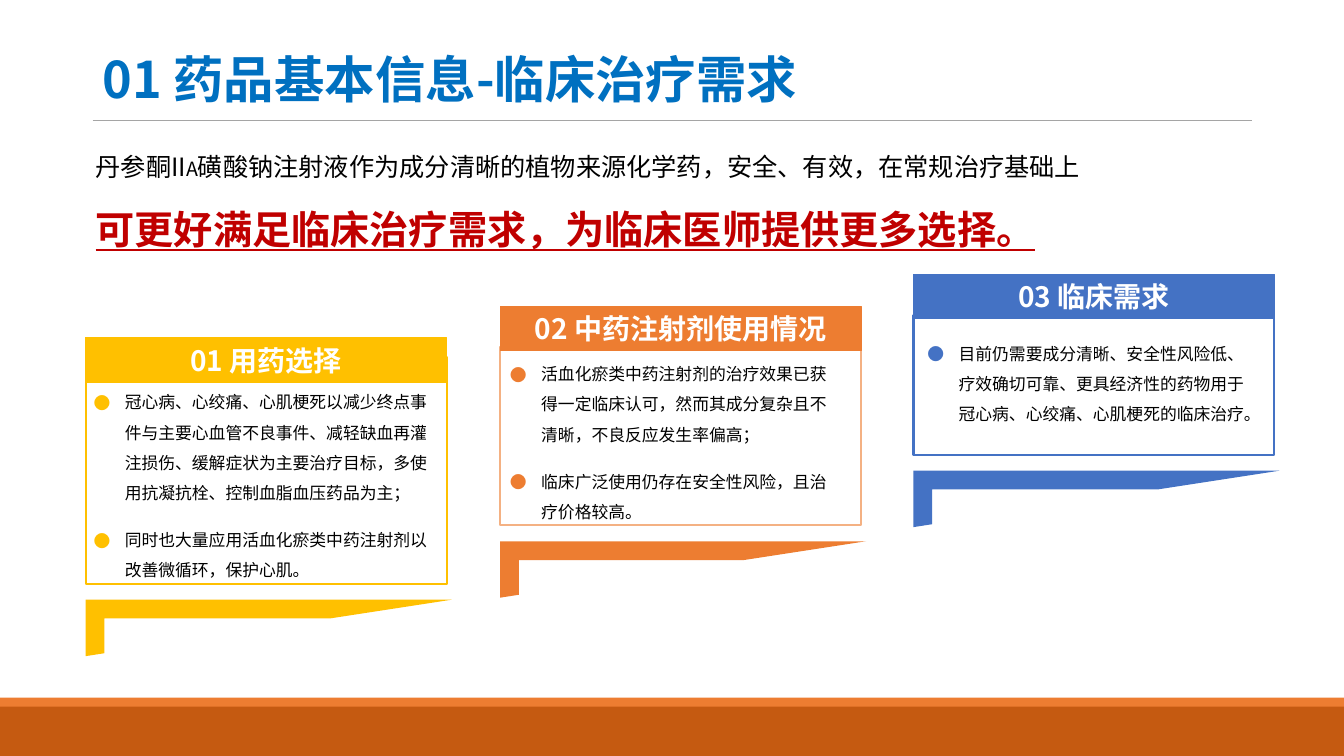
from lxml import etree
from pptx import Presentation
from pptx.dml.color import RGBColor
from pptx.enum import shapes, text
from pptx.oxml import ns
from pptx.util import Inches, Pt

FONT = "Noto Sans CJK SC"
COLORS = {
    "title": "0070C0", "body": "000000", "accent": "C00000", "white": "FFFFFF",
    "rule": "A5A5A5", "footer": "C55A11", "orange": "ED7D31",
    "orange_edge": "F4B183", "yellow": "FFC000", "blue": "4472C4",
}
TITLE = "01 药品基本信息-临床治疗需求"
INTRO = [
    [("丹参酮II", {"size": 18}), ("A", {"size": 14}),
     ("磺酸钠注射液作为成分清晰的植物来源化学药，安全、有效，在常规治疗基础上", {"size": 18})],
    [("可更好满足临床治疗需求，为临床医师提供更多选择。",
      {"size": 28, "color": "accent", "bold": True, "underline": True})],
]
CARDS = [
    {"head": "01 用药选择", "color": "yellow", "edge": "yellow", "left": 0.85, "top": 3.35,
     "frame": (3.54, 2.25), "body": (0.83, 3.74, 3.63, 2.05), "gap": 6,
     "points": ["冠心病、心绞痛、心肌梗死以减少终点事件与主要心血管不良事件、减轻缺血再灌注损伤、"
                "缓解症状为主要治疗目标，多使用抗凝抗栓、控制血脂血压药品为主；",
                "同时也大量应用活血化瘀类中药注射剂以改善微循环，保护心肌。"]},
    {"head": "02 中药注射剂使用情况", "color": "orange", "edge": "orange_edge", "left": 4.96, "top": 3.04,
     "frame": (3.44, 1.77), "body": (4.96, 3.46, 3.46, 1.75), "gap": 6,
     "points": ["活血化瘀类中药注射剂的治疗效果已获得一定临床认可，然而其成分复杂且不清晰，不良反应发生率偏高；",
                "临床广泛使用仍存在安全性风险，且治疗价格较高。"]},
    {"head": "03 临床需求", "color": "blue", "edge": "blue", "left": 9.06, "top": 2.72,
     "frame": (3.13, 1.38), "body": (9.1, 3.26, 3.46, 0.97), "gap": 0,
     "points": ["目前仍需要成分清晰、安全性风险低、疗效确切可靠、更具经济性的药物用于冠心病、心绞痛、心肌梗死的临床治疗。"]},
]
CARD_WIDTH, HEAD_HEIGHT = 3.58, 0.44
CORNER_WIDTH, CORNER_HEIGHT, CORNER_GAP = 3.63, 0.56, 0.16

deck = Presentation()
deck.slide_width, deck.slide_height = Inches(13.33), Inches(7.5)
page = deck.slides.add_slide(deck.slide_layouts[6])


def rgb(name):
    return RGBColor.from_string(COLORS[name])


def add_shape(kind, *area, fill=None, line=None, width=0.5):
    shape = page.shapes.add_shape(kind, *map(Inches, area))
    shape.shadow.inherit = False
    if fill:
        shape.fill.solid()
        shape.fill.fore_color.rgb = rgb(fill)
    else:
        shape.fill.background()
    if line:
        shape.line.color.rgb = rgb(line)
        shape.line.width = Pt(width)
    else:
        shape.line.fill.background()
    return shape


def add_box(*area, anchor=text.MSO_ANCHOR.TOP, grow=True):
    box = page.shapes.add_textbox(*map(Inches, area))
    box.text_frame.word_wrap = True
    box.text_frame.vertical_anchor = anchor
    if grow:
        box.text_frame.auto_size = text.MSO_AUTO_SIZE.SHAPE_TO_FIT_TEXT
    return box


def add_span(para, words, size=12, color="body", bold=False, underline=False):
    span = para.add_run()
    span.text = words
    span.font.name = FONT
    span.font.size = Pt(size)
    span.font.bold = bold
    span.font.underline = underline
    span.font.color.rgb = rgb(color)
    latin = span.font._element.find(ns.qn("a:latin"))
    east_asian = etree.Element(ns.qn("a:ea"), typeface=FONT)
    latin.addnext(east_asian)


def get_para(frame, index):
    return frame.paragraphs[0] if index == 0 else frame.add_paragraph()


def add_bullet(para, color):
    props = para._p.get_or_add_pPr()
    props.set("marL", str(Inches(0.31)))
    props.set("indent", str(-Inches(0.31)))
    bullet_color = etree.SubElement(props, ns.qn("a:buClr"))
    etree.SubElement(bullet_color, ns.qn("a:srgbClr"), val=COLORS[color])
    etree.SubElement(props, ns.qn("a:buFont"), typeface=FONT)
    etree.SubElement(props, ns.qn("a:buChar"), char="●")


def add_card(card):
    left, top = card["left"], card["top"]
    frame_top, frame_height = card["frame"]
    rectangle = shapes.MSO_SHAPE.RECTANGLE
    add_shape(rectangle, left, frame_top, CARD_WIDTH, frame_height, line=card["edge"], width=1.5)

    body = add_box(*card["body"])
    for index, point in enumerate(card["points"]):
        para = get_para(body.text_frame, index)
        add_bullet(para, card["color"])
        para.line_spacing = 1.5
        para.space_before = Pt(card["gap"] if index else 0)
        para.space_after = Pt(card["gap"])
        add_span(para, point)

    head = add_shape(rectangle, left, top, CARD_WIDTH, HEAD_HEIGHT, fill=card["color"], line=card["color"])
    head.text_frame.word_wrap = True
    head.text_frame.vertical_anchor = text.MSO_ANCHOR.MIDDLE
    para = head.text_frame.paragraphs[0]
    para.alignment = text.PP_ALIGN.CENTER
    add_span(para, card["head"], size=20, color="white", bold=True)

    corner_top = frame_top + frame_height + CORNER_GAP
    add_shape(shapes.MSO_SHAPE.HALF_FRAME, left, corner_top, CORNER_WIDTH, CORNER_HEIGHT, fill=card["color"])


title = add_box(0.92, 0.09, 11.5, 1.45, anchor=text.MSO_ANCHOR.MIDDLE, grow=False)
title_para = title.text_frame.paragraphs[0]
title_para.line_spacing = 0.9
add_span(title_para, TITLE, size=36, color="title", bold=True)

add_shape(shapes.MSO_SHAPE.RECTANGLE, 0, 7, 13.33, 0.5, fill="footer")
add_shape(shapes.MSO_SHAPE.RECTANGLE, 0, 6.92, 13.33, 0.09, fill="orange")

rule = page.shapes.add_connector(
    shapes.MSO_CONNECTOR.STRAIGHT, Inches(0.92), Inches(1.19), Inches(12.42), Inches(1.19))
rule.line.color.rgb = rgb("rule")
rule.line.width = Pt(0.5)
etree.SubElement(rule._element.spPr, ns.qn("a:effectLst"))

intro = add_box(0.85, 1.3, 11.69, 1.18)
for row, spans in enumerate(INTRO):
    intro_para = get_para(intro.text_frame, row)
    intro_para.line_spacing = 1.5
    for words, style in spans:
        add_span(intro_para, words, **style)

for card in CARDS:
    add_card(card)

deck.save("out.pptx")
